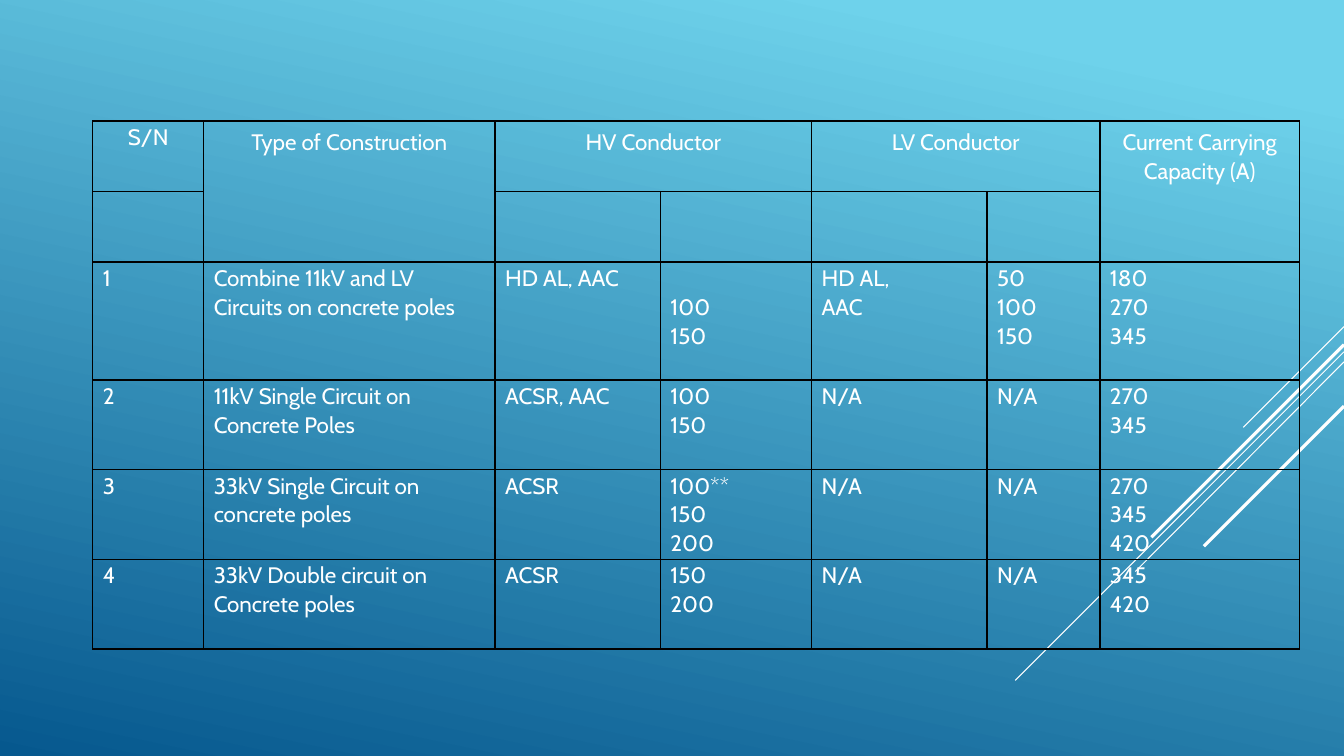
from lxml import etree
from pptx import Presentation
from pptx.dml.color import RGBColor
from pptx.enum.shapes import MSO_CONNECTOR
from pptx.enum.text import PP_ALIGN
from pptx.oxml.ns import qn
from pptx.util import Inches, Pt

FONT = "Cabin"
WHITE = "FFFFFF"
BLACK = "000000"

# Start x, start y, end x, end y, width in points
RAYS = [
    (13.33, 3.24, 12.33, 4.24, 0.75),
    (13.33, 3.49, 10.07, 6.75, 0.75),
    (13.33, 3.59, 11.26, 5.67, 0.75),
    (13.33, 3.42, 11.42, 5.33, 2.25),
    (13.33, 4.03, 11.94, 5.42, 2.25),
]

COLUMN_WIDTHS = [1.1, 2.89, 1.64, 1.5, 1.74, 1.12, 1.98]
ROW_HEIGHTS = [0.7, 0.7, 1.17, 0.89, 0.89, 0.89]
LINE_HEIGHT = 0.29
BODY_MARGINS = (0.1, 0.01, 0.1, 0)
HEADER_MARGINS = (0.13, 0.06, 0.13, 0.06)

# First row, first column, last row, last column
MERGES = [(0, 1, 1, 1), (0, 2, 0, 3), (0, 4, 0, 5), (0, 6, 1, 6)]
HEADERS = {
    1: "Type of Construction",
    2: "HV Conductor",
    4: "LV Conductor",
    6: "Current Carrying Capacity (A)",
}
CONSTRUCTIONS = [
    ["1", "Combine 11kV and LV Circuits on concrete poles", "HD AL, AAC",
     "100\n150", "HD AL,\nAAC", "50\n100\n150", "180\n270\n345"],
    ["2", "11kV Single Circuit on Concrete Poles", "ACSR, AAC",
     "100\n150", "N/A", "N/A", "270\n345"],
    ["3", "33kV Single Circuit on concrete poles", "ACSR",
     "100**\n150\n200", "N/A", "N/A", "270\n345\n420"],
    ["4", "33kV Double circuit on Concrete poles", "ACSR",
     "150\n200", "N/A", "N/A", "345\n420"],
]


def color(value):
    return RGBColor.from_string(value)


def set_background(slide):
    fill = slide.background.fill
    fill.gradient()
    fill.gradient_angle = 360 - 102
    for stop, position, value in zip(
        fill.gradient_stops, (0.1, 1.0), ("6ED2EB", "06588E")
    ):
        stop.position = position
        stop.color.rgb = color(value)


def add_ray(slide, start_x, start_y, end_x, end_y, width):
    ray = slide.shapes.add_connector(
        MSO_CONNECTOR.STRAIGHT,
        Inches(start_x), Inches(start_y), Inches(end_x), Inches(end_y),
    )
    ray.line.color.rgb = color(WHITE)
    ray.line.width = Pt(width)
    etree.SubElement(ray._element.spPr, qn("a:effectLst"))


def set_borders(cell):
    properties = cell._tc.get_or_add_tcPr()
    for side in ("a:lnL", "a:lnR", "a:lnT", "a:lnB"):
        line = etree.SubElement(properties, qn(side), w=str(Pt(1)))
        fill = etree.SubElement(line, qn("a:solidFill"))
        etree.SubElement(fill, qn("a:srgbClr"), val=BLACK)


def set_margins(cell, margins):
    cell.margin_left, cell.margin_top, cell.margin_right, cell.margin_bottom = (
        Inches(margin) for margin in margins
    )


def write_cell(cell, text, margins=BODY_MARGINS, alignment=PP_ALIGN.LEFT):
    set_margins(cell, margins)
    cell.text = text
    for paragraph in cell.text_frame.paragraphs:
        paragraph.alignment = alignment
        paragraph.line_spacing = 1.07
        paragraph.font.name = FONT
        paragraph.font.size = Pt(16)
        paragraph.font.color.rgb = color(WHITE)


def add_grid(slide):
    """Add the empty, bordered table with its merged header cells."""
    table = slide.shapes.add_table(
        len(ROW_HEIGHTS), len(COLUMN_WIDTHS), Inches(0.92), Inches(1.2),
        Inches(sum(COLUMN_WIDTHS)), Inches(sum(ROW_HEIGHTS)),
    ).table
    table.first_row = False
    table.horz_banding = False
    for column, width in zip(table.columns, COLUMN_WIDTHS):
        column.width = Inches(width)
    for row, height in zip(table.rows, ROW_HEIGHTS):
        row.height = Inches(height)
    for cell in table.iter_cells():
        set_borders(cell)
        cell.fill.background()
    for top, left, bottom, right in MERGES:
        table.cell(top, left).merge(table.cell(bottom, right))
    return table


def fill_table(table):
    write_cell(table.cell(0, 0), "S/N", alignment=PP_ALIGN.CENTER)
    for column, header in HEADERS.items():
        write_cell(table.cell(0, column), header, HEADER_MARGINS, PP_ALIGN.CENTER)
    for row, texts in enumerate(CONSTRUCTIONS, start=2):
        for column, text in enumerate(texts):
            write_cell(table.cell(row, column), text)
    # The first HV sizes start one line lower, level with the LV sizes
    table.cell(2, 3).margin_top = Inches(BODY_MARGINS[1] + LINE_HEIGHT)


def main():
    presentation = Presentation()
    presentation.slide_width = Inches(13.33)
    presentation.slide_height = Inches(7.5)
    slide = presentation.slides.add_slide(presentation.slide_layouts[6])
    set_background(slide)
    for ray in RAYS:
        add_ray(slide, *ray)
    fill_table(add_grid(slide))
    presentation.save("out.pptx")


if __name__ == "__main__":
    main()
